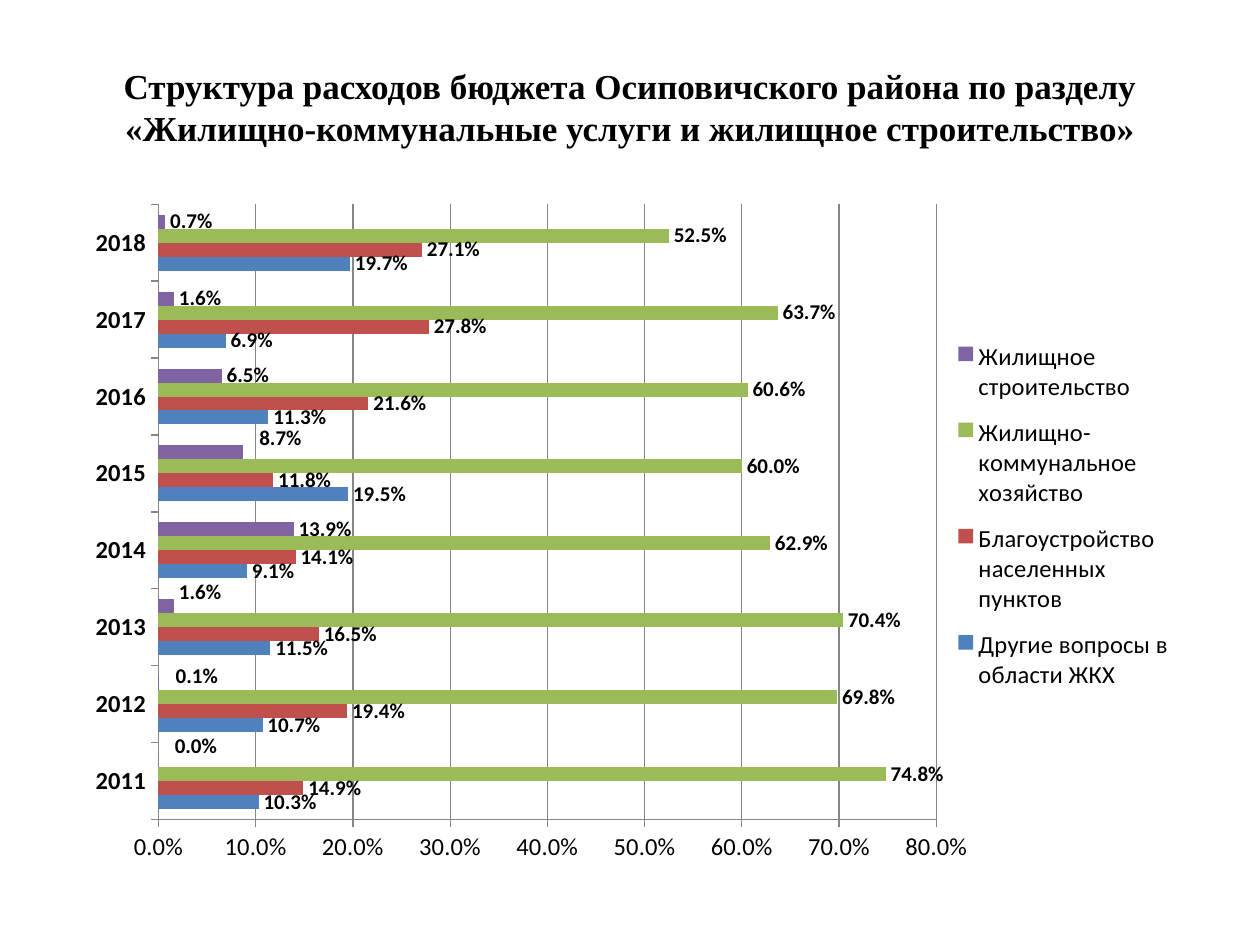
import pptx
import pptx.util
import pptx.chart.data
import pptx.dml.color
import pptx.enum.chart
import pptx.enum.text
import pptx.oxml
import pptx.oxml.ns

HEADING = ("Структура расходов бюджета Осиповичского района по разделу "
           "«Жилищно-коммунальные услуги и жилищное строительство»")
YEARS = [str(year) for year in range(2011, 2019)]
SPENDING = [
    ("Другие вопросы в области ЖКХ", "4F81BD",
     [0.103, 0.107, 0.115, 0.091, 0.195, 0.113, 0.069, 0.197]),
    ("Благоустройство населенных пунктов", "C0504D",
     [0.149, 0.194, 0.165, 0.141, 0.118, 0.216, 0.278, 0.271]),
    ("Жилищно-коммунальное хозяйство", "9BBB59",
     [0.748, 0.698, 0.704, 0.629, 0.6, 0.606, 0.637, 0.525]),
    ("Жилищное строительство", "8064A2",
     [0, 0.001, 0.016, 0.139, 0.087, 0.065, 0.016, 0.007]),
]
RAISED_LABELS = {"2011": (0.01, -0.02), "2012": (0.01, -0.01),
                 "2013": (0, -0.02), "2015": (0.01, -0.02)}
PLOT_AREA = {"x": 0.092, "y": 0.027, "w": 0.686, "h": 0.874}
LEGEND_AREA = {"x": 0.79, "y": 0.2, "w": 0.2, "h": 0.54}
PERCENT = "0.0%"


def color(value):
    return pptx.dml.color.RGBColor.from_string(value)


def set_font(font, size, bold=False, name="Calibri"):
    font.name = name
    font.size = pptx.util.Pt(size)
    font.bold = bold
    font.color.rgb = color("000000")


def manual_layout(settings):
    parts = "".join(f'<c:{tag} val="{value}"/>' for tag, value in settings.items())
    return pptx.oxml.parse_xml(
        f'<c:layout {pptx.oxml.ns.nsdecls("c")}>'
        f'<c:manualLayout>{parts}</c:manualLayout></c:layout>')


def place(element, position, settings):
    for default in element.xpath("c:layout"):
        element.remove(default)
    element.insert(position, manual_layout(
        {**settings.get("target", {}), "xMode": "edge", "yMode": "edge",
         **settings["area"]}))


def add_heading(slide):
    box = slide.shapes.add_textbox(*map(pptx.util.Inches, (0.5, 0.3, 9, 1.09)))
    frame = box.text_frame
    frame.word_wrap = True
    frame.vertical_anchor = pptx.enum.text.MSO_ANCHOR.MIDDLE
    paragraph = frame.paragraphs[0]
    paragraph.alignment = pptx.enum.text.PP_ALIGN.CENTER
    run = paragraph.add_run()
    run.text = HEADING
    set_font(run.font, 20, True, "Times New Roman")


def style_axis(axis, bold):
    set_font(axis.tick_labels.font, 14, bold)
    axis.major_tick_mark = pptx.enum.chart.XL_TICK_MARK.OUTSIDE
    axis.format.line.color.rgb = color("868686")


def label_bars(series):
    labels = series.data_labels
    labels.show_value = True
    labels.number_format = PERCENT
    labels.number_format_is_linked = False
    labels.position = pptx.enum.chart.XL_LABEL_POSITION.OUTSIDE_END
    set_font(labels.font, 12, True)
    for leader in series._element.xpath("c:dLbls/c:showLeaderLines"):
        leader.set("val", "0")


def raise_labels(series):
    for year, (right, down) in RAISED_LABELS.items():
        index = YEARS.index(year)
        label = series.points[index].data_label
        set_font(label.font, 12, True)
        label.position = pptx.enum.chart.XL_LABEL_POSITION.OUTSIDE_END
        mark = series._element.xpath(f'c:dLbls/c:dLbl/c:idx[@val="{index}"]')[0]
        mark.addnext(manual_layout({"x": right, "y": down}))


def add_spending_chart(slide):
    data = pptx.chart.data.CategoryChartData(number_format=PERCENT)
    data.categories = YEARS
    for name, _, shares in SPENDING:
        data.add_series(name, shares)
    chart = slide.shapes.add_chart(
        pptx.enum.chart.XL_CHART_TYPE.BAR_CLUSTERED,
        *map(pptx.util.Inches, (0.43, 1.47, 9, 5.59)), data).chart
    set_font(chart.font, 18)
    chart.has_title = False

    chart.has_legend = True
    chart.legend.position = pptx.enum.chart.XL_LEGEND_POSITION.RIGHT
    chart.legend.include_in_layout = False
    set_font(chart.legend.font, 14)

    style_axis(chart.category_axis, True)
    shares_axis = chart.value_axis
    style_axis(shares_axis, False)
    shares_axis.minimum_scale, shares_axis.maximum_scale = 0, 0.8
    shares_axis.major_unit = 0.1
    shares_axis.tick_labels.number_format = PERCENT
    shares_axis.tick_labels.number_format_is_linked = False
    shares_axis.has_major_gridlines = True
    shares_axis.major_gridlines.format.line.color.rgb = color("868686")

    plot = chart.plots[0]
    plot.gap_width = 150
    plot.vary_by_categories = False
    for series, (_, fill, _) in zip(plot.series, SPENDING):
        series.format.fill.solid()
        series.format.fill.fore_color.rgb = color(fill)
        series.invert_if_negative = False
        label_bars(series)
    raise_labels(plot.series[-1])

    space = chart._chartSpace
    place(space.xpath("c:chart/c:plotArea")[0], 0,
          {"target": {"layoutTarget": "inner"}, "area": PLOT_AREA})
    place(space.xpath("c:chart/c:legend")[0], 1, {"area": LEGEND_AREA})


def main():
    deck = pptx.Presentation()
    deck.slide_width = pptx.util.Inches(10)
    deck.slide_height = pptx.util.Inches(7.5)
    slide = deck.slides.add_slide(deck.slide_layouts[6])
    add_heading(slide)
    add_spending_chart(slide)
    deck.save("out.pptx")


if __name__ == "__main__":
    main()
